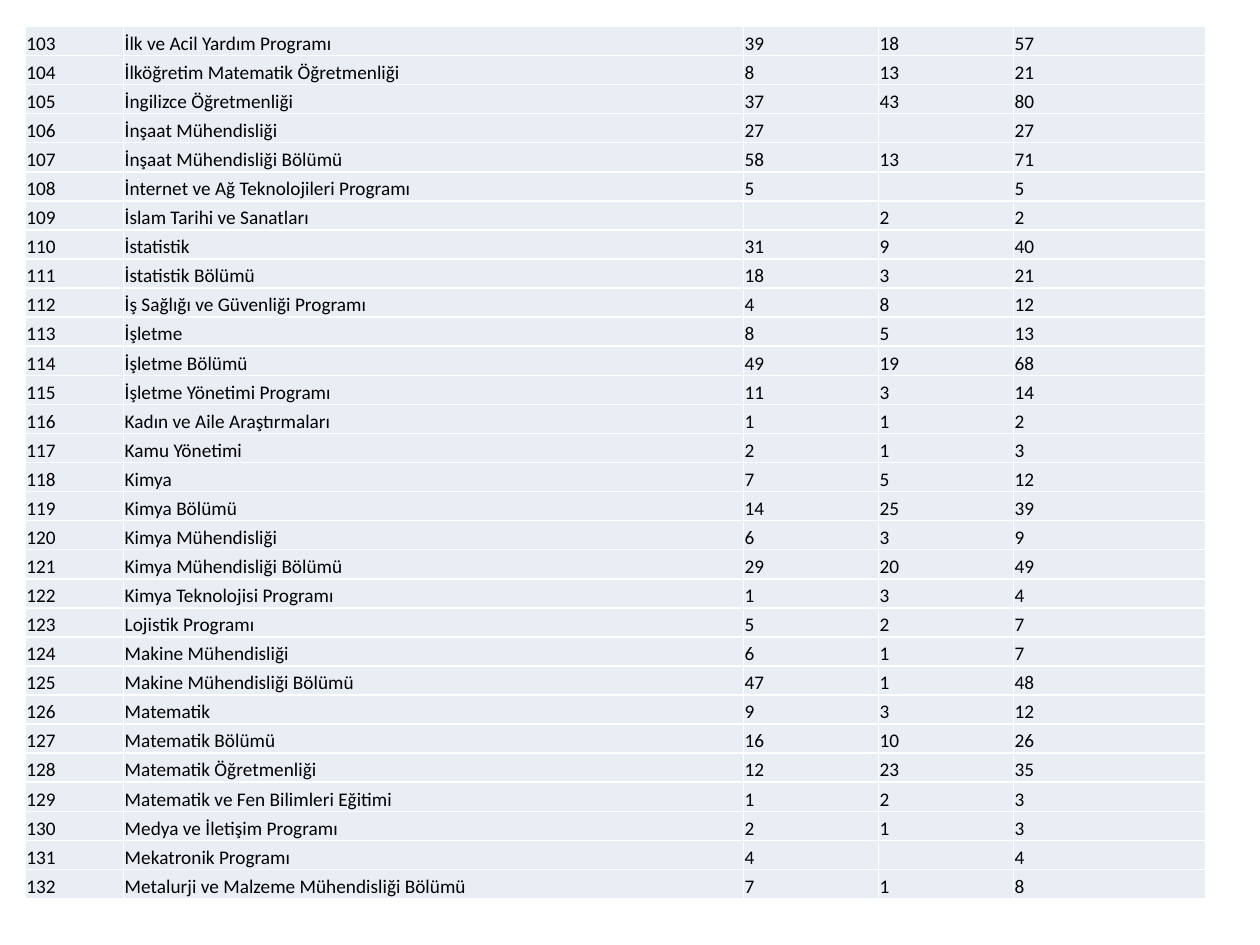
from lxml import etree
from pptx import Presentation
from pptx.dml.color import RGBColor
from pptx.enum.text import MSO_ANCHOR
from pptx.oxml.ns import qn
from pptx.util import Pt

BOTTOM = MSO_ANCHOR.BOTTOM

FONT_NAME = "Calibri"
FONT_SIZE = 11
TEXT_COLOR = "000000"
CELL_COLOR = "E9EDF4"
BORDER_COLOR = "FFFFFF"
BORDER_WIDTH = 1

TABLE_LEFT, TABLE_TOP = 14.4, 15.1
ROW_HEIGHT = 16.63
COLUMN_WIDTHS = [56.2, 354.2, 77.2, 77.2, 109.6]

FIRST_NUMBER = 103
# Programme name and its two counts; the last column is their sum.
PROGRAMMES = [
    ("İlk ve Acil Yardım Programı", 39, 18),
    ("İlköğretim Matematik Öğretmenliği", 8, 13),
    ("İngilizce Öğretmenliği", 37, 43),
    ("İnşaat Mühendisliği", 27, None),
    ("İnşaat Mühendisliği Bölümü", 58, 13),
    ("İnternet ve Ağ Teknolojileri Programı", 5, None),
    ("İslam Tarihi ve Sanatları", None, 2),
    ("İstatistik", 31, 9),
    ("İstatistik Bölümü", 18, 3),
    ("İş Sağlığı ve Güvenliği Programı", 4, 8),
    ("İşletme", 8, 5),
    ("İşletme Bölümü", 49, 19),
    ("İşletme Yönetimi Programı", 11, 3),
    ("Kadın ve Aile Araştırmaları", 1, 1),
    ("Kamu Yönetimi", 2, 1),
    ("Kimya", 7, 5),
    ("Kimya Bölümü", 14, 25),
    ("Kimya Mühendisliği", 6, 3),
    ("Kimya Mühendisliği Bölümü", 29, 20),
    ("Kimya Teknolojisi Programı", 1, 3),
    ("Lojistik Programı", 5, 2),
    ("Makine Mühendisliği", 6, 1),
    ("Makine Mühendisliği Bölümü", 47, 1),
    ("Matematik", 9, 3),
    ("Matematik Bölümü", 16, 10),
    ("Matematik Öğretmenliği", 12, 23),
    ("Matematik ve Fen Bilimleri Eğitimi", 1, 2),
    ("Medya ve İletişim Programı", 2, 1),
    ("Mekatronik Programı", 4, None),
    ("Metalurji ve Malzeme Mühendisliği Bölümü", 7, 1),
]


def rgb(color):
    return RGBColor.from_string(color)


def set_borders(cell, color, width):
    properties = cell._tc.get_or_add_tcPr()
    for side in ("a:lnL", "a:lnR", "a:lnT", "a:lnB"):
        line = etree.SubElement(properties, qn(side), w=str(Pt(width)))
        fill = etree.SubElement(line, qn("a:solidFill"))
        etree.SubElement(fill, qn("a:srgbClr"), val=color)


def set_cell_text(cell, value):
    paragraph = cell.text_frame.paragraphs[0]
    if value is None:
        # An empty cell keeps the small type size, so its row does not grow.
        etree.SubElement(paragraph._p, qn("a:endParaRPr"), sz=str(FONT_SIZE * 100))
        return
    paragraph.text = str(value)
    font = paragraph.runs[0].font
    font.name = FONT_NAME
    font.size = Pt(FONT_SIZE)
    font.color.rgb = rgb(TEXT_COLOR)


def format_cell(cell):
    cell.vertical_anchor = BOTTOM
    cell.margin_left = cell.margin_right = cell.margin_top = Pt(0.7)
    cell.margin_bottom = Pt(0)
    set_borders(cell, BORDER_COLOR, BORDER_WIDTH)
    cell.fill.solid()
    cell.fill.fore_color.rgb = rgb(CELL_COLOR)


def add_programme_table(slide):
    row_count = len(PROGRAMMES)
    table = slide.shapes.add_table(
        row_count, len(COLUMN_WIDTHS), Pt(TABLE_LEFT), Pt(TABLE_TOP),
        Pt(sum(COLUMN_WIDTHS)), Pt(ROW_HEIGHT * row_count),
    ).table
    table.first_row = False
    table.horz_banding = False
    for column, width in zip(table.columns, COLUMN_WIDTHS):
        column.width = Pt(width)
    for number, (row, programme) in enumerate(zip(table.rows, PROGRAMMES), FIRST_NUMBER):
        row.height = Pt(ROW_HEIGHT)
        name, first, second = programme
        total = (first or 0) + (second or 0)
        for cell, value in zip(row.cells, (number, name, first, second, total)):
            format_cell(cell)
            set_cell_text(cell, value)


def main():
    presentation = Presentation()
    presentation.slide_width = Pt(720)
    presentation.slide_height = Pt(540)
    slide = presentation.slides.add_slide(presentation.slide_layouts[6])
    add_programme_table(slide)
    presentation.save("out.pptx")


if __name__ == "__main__":
    main()
